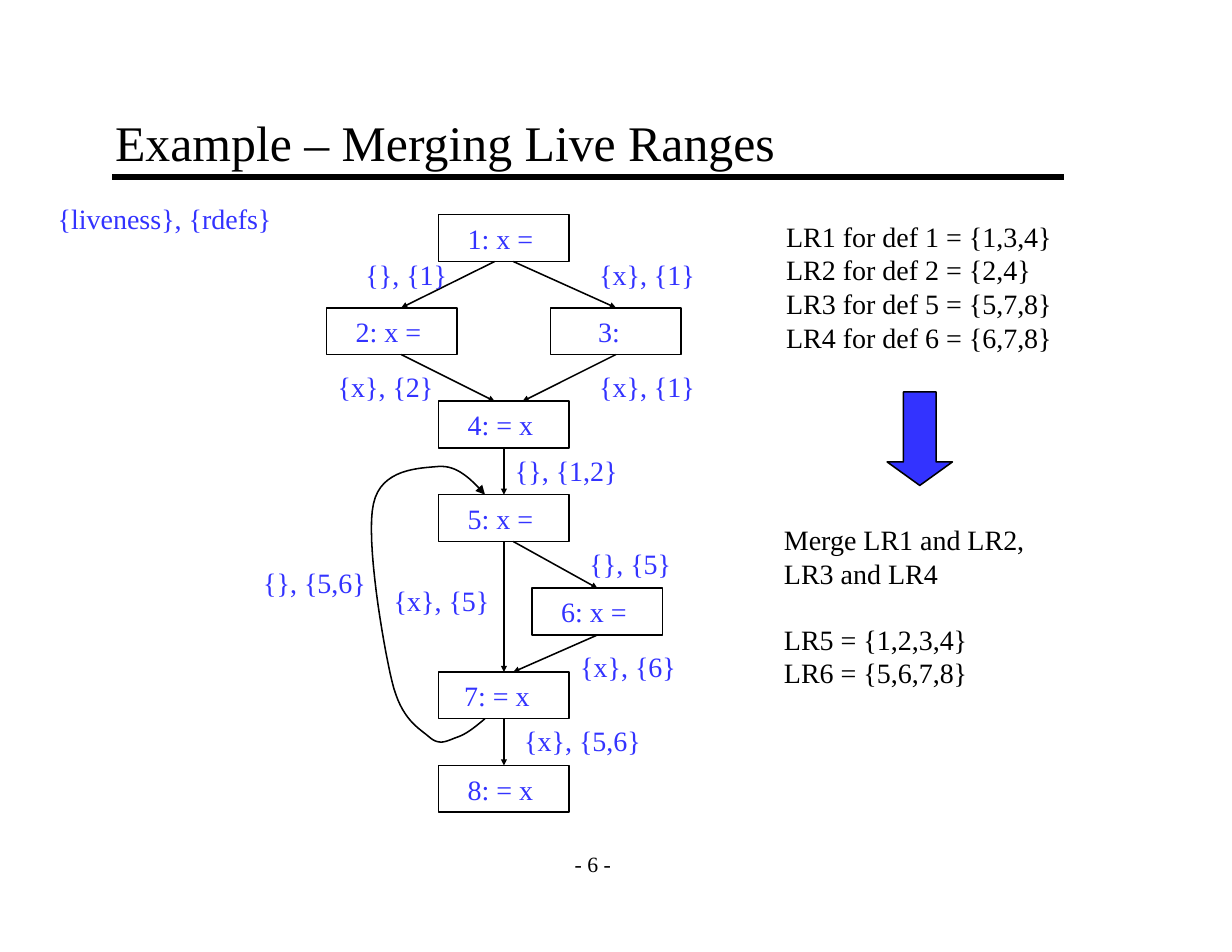
from lxml import etree
from pptx import Presentation
from pptx import util as u
from pptx.dml.color import RGBColor
from pptx.enum import shapes, text
from pptx.oxml.ns import qn

COLORS = {"ink": "000000", "accent": "3333FF"}
BOX_W, BOX_H = 2.96, 1.06
MID = 9.95
BOXES = [
    ("1: x = ", MID, 4.87),
    ("2: x = ", MID - 2.54, 6.98),
    ("3:  ", MID + 2.54, 6.98),
    ("4: = x ", MID, 9.1),
    ("5: x = ", MID, 11.22),
    ("6: x = ", 12.07, 13.34),
    ("7: = x  ", MID, 15.24),
    ("8: = x ", MID, 17.36),
]
EDGES = [
    (1, 2, -0.21, 0.21),
    (1, 3, 0.21, 0),
    (3, 4, 0, 0.42),
    (2, 4, 0.21, -0.21),
    (4, 5, 0, 0),
    (5, 6, 0.21, 0),
    (5, 7, 0, 0),
    (6, 7, 0, 0.21),
    (7, 8, 0, 0),
]
LABELS = [
    ("{x}, {5,6}", 11.64, 16.28, 3.15),
    ("{x}, {6}", 12.91, 14.6, 2.69),
    ("{}, {5}", 13.12, 12.28, 2.36),
    ("{x}, {5}", 8.68, 13.12, 2.69),
    ("{}, {1,2}", 11.43, 10.16, 2.84),
    ("{}, {1}", 8.04, 5.72, 2.36),
    ("{x}, {2}", 7.41, 8.26, 2.69),
    ("{x}, {1}", 13.34, 5.72, 2.69),
    ("{x}, {1}", 13.34, 8.26, 2.69),
    ("{}, {5,6}", 5.72, 12.7, 2.84),
    ("{liveness}, {rdefs}", 1.06, 4.45, 5.36),
]
LOOP_START = (11, 16.3)
LOOP_CURVES = [
    ((10.79, 16.48), (10.58, 16.65), (10.37, 16.72)),
    ((10.16, 16.79), (9.98, 16.93), (9.74, 16.72)),
    ((9.5, 16.51), (9.1, 16.33), (8.89, 15.45)),
    ((8.68, 14.57), (8.29, 12.24), (8.47, 11.43)),
    ((8.64, 10.62), (9.53, 10.62), (9.95, 10.58)),
    ((10.37, 10.55), (10.69, 10.87), (11, 11.22)),
]
RANGES = [
    "LR1 for def 1 = {1,3,4}",
    "LR2 for def 2 = {2,4}",
    "LR3 for def 5 = {5,7,8}",
    "LR4 for def 6 = {6,7,8}",
]
MERGED = ["Merge LR1 and LR2,", "LR3 and LR4", "LR5 = {1,2,3,4}", "LR6 = {5,6,7,8}"]


def bezier(p0, p1, p2, p3, steps=16):
    for i in range(1, steps + 1):
        t = i / steps
        weights = ((1 - t) ** 3, 3 * t * (1 - t) ** 2, 3 * t * t * (1 - t), t ** 3)
        yield tuple(u.Cm(sum(w * p[k] for w, p in zip(weights, (p0, p1, p2, p3)))) for k in (0, 1))


class Sketch:
    font = "Times New Roman"

    def __init__(self, slide):
        self.shapes = slide.shapes

    def color(self, name):
        return RGBColor.from_string(COLORS[name])

    def outline(self, sp, width=1, head=None):
        sp.line.color.rgb = self.color("ink")
        sp.line.width = u.Pt(width)
        if head:
            ln = sp._element.spPr.find(qn("a:ln"))
            etree.SubElement(ln, qn("a:tailEnd"), type="triangle", w=head, len=head)

    def add_lines(self, tf, lines, color, size=18, align=None, gap_before=None):
        for i, line in enumerate(lines):
            p = tf.paragraphs[0] if i == 0 else tf.add_paragraph()
            p.alignment = align
            if i == gap_before:
                p.space_before = u.Cm(0.73)
            r = p.add_run()
            r.text = line
            r.font.name, r.font.size = self.font, u.Pt(size)
            r.font.color.rgb = self.color(color)

    def label(self, lines, x, y, w, h=1.02, color="accent", **style):
        tf = self.shapes.add_textbox(u.Cm(x), u.Cm(y), u.Cm(w), u.Cm(h)).text_frame
        tf.word_wrap = False
        tf.auto_size = text.MSO_AUTO_SIZE.SHAPE_TO_FIT_TEXT
        self.add_lines(tf, lines, color, **style)

    def heading(self, line, x, y, w, h, anchor, **style):
        tf = self.shapes.add_textbox(u.Cm(x), u.Cm(y), u.Cm(w), u.Cm(h)).text_frame
        tf.word_wrap = True
        tf.vertical_anchor = anchor
        tf.margin_left = tf.margin_right = u.Cm(0.28)
        tf.margin_top = tf.margin_bottom = u.Cm(0.15)
        self.add_lines(tf, [line], "ink", **style)

    def shape(self, kind, x, y, w, h, fill=None):
        sp = self.shapes.add_shape(kind, u.Cm(x), u.Cm(y), u.Cm(w), u.Cm(h))
        sp.shadow.inherit = False
        if fill:
            sp.fill.solid()
            sp.fill.fore_color.rgb = self.color(fill)
        else:
            sp.fill.background()
        self.outline(sp)
        return sp

    def box(self, line, x, y):
        sp = self.shape(shapes.MSO_SHAPE.RECTANGLE, x, y, BOX_W, BOX_H)
        tf = sp.text_frame
        tf.word_wrap = False
        tf.vertical_anchor = text.MSO_ANCHOR.MIDDLE
        self.add_lines(tf, [line], "accent", align=text.PP_ALIGN.CENTER)
        return sp

    def line(self, x1, y1, x2, y2, width=1, head=None):
        cx = self.shapes.add_connector(shapes.MSO_CONNECTOR.STRAIGHT, x1, y1, x2, y2)
        self.outline(cx, width, head)
        etree.SubElement(cx._element.spPr, qn("a:effectLst"))
        return cx

    def edge(self, a, b, shift_a, shift_b):
        cx = self.line(a.left + a.width // 2 + u.Cm(shift_a), a.top + a.height,
                       b.left + b.width // 2 + u.Cm(shift_b), b.top, head="sm")
        if not shift_a:
            cx.begin_connect(a, 2)
        if not shift_b:
            cx.end_connect(b, 0)

    def curve(self, start, curves):
        builder = self.shapes.build_freeform(u.Cm(start[0]), u.Cm(start[1]))
        for c1, c2, end in curves:
            builder.add_line_segments(bezier(start, c1, c2, end), close=False)
            start = end
        sp = builder.convert_to_shape()
        sp.shadow.inherit = False
        sp.fill.background()
        self.outline(sp, head="med")


def main():
    prs = Presentation()
    prs.slide_width, prs.slide_height = u.Cm(27.94), u.Cm(21.59)
    s = Sketch(prs.slides.add_slide(prs.slide_layouts[6]))

    s.line(u.Cm(2.54), u.Cm(4.02), u.Cm(24.13), u.Cm(4.02), width=4)
    s.heading("- 6 -", 12.49, 19.05, 1.91, 1.06, text.MSO_ANCHOR.MIDDLE,
              size=14, align=text.PP_ALIGN.CENTER)
    s.heading("Example – Merging Live Ranges", 2.33, 2.33, 21.59, 1.7,
              text.MSO_ANCHOR.BOTTOM, size=32)

    boxes = [s.box(*box) for box in BOXES]
    for a, b, shift_a, shift_b in EDGES:
        s.edge(boxes[a - 1], boxes[b - 1], shift_a, shift_b)
    s.curve(LOOP_START, LOOP_CURVES)
    for line, x, y, w in LABELS:
        s.label([line], x, y, w)

    s.label(RANGES, 17.58, 4.85, 6.53, 3.3, color="ink")
    arrow = s.shape(shapes.MSO_SHAPE.DOWN_ARROW, 20.12, 8.89, 1.48, 2.12, fill="accent")
    arrow.adjustments[0], arrow.adjustments[1] = 0.5, 0.36
    s.label(MERGED, 17.53, 11.73, 5.97, 4.06, color="ink", gap_before=2)
    prs.save("out.pptx")


if __name__ == "__main__":
    main()
